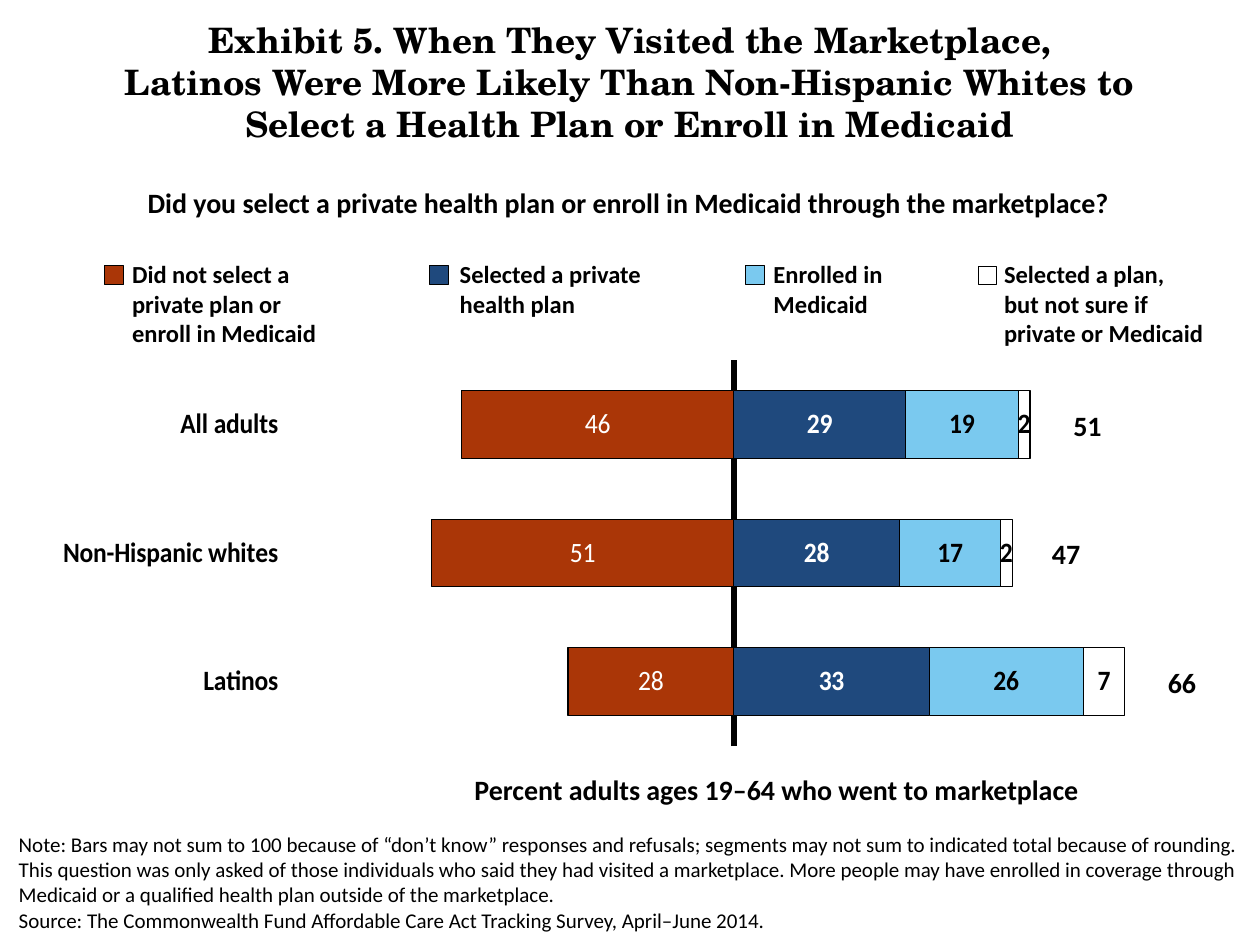
from lxml import etree
from pptx import Presentation
from pptx import util as u
from pptx.chart import data as chart_data
from pptx.dml.color import RGBColor
from pptx.enum import chart as ch, shapes, text
from pptx.oxml import ns

BLACK = RGBColor(0x00, 0x00, 0x00)
WHITE = RGBColor(0xFF, 0xFF, 0xFF)
RUST = RGBColor(0xAA, 0x36, 0x07)
NAVY = RGBColor(0x1F, 0x49, 0x7D)
SKY = RGBColor(0x7A, 0xC9, 0xEF)
BODY_FONT = "Calibri"
TITLE_FONT = "TeX Gyre Schola"
CENTER = text.PP_ALIGN.CENTER
LEFT = text.PP_ALIGN.LEFT


def write_lines(para, lines, size, bold=True, name=BODY_FONT, align=LEFT):
    para.alignment = align
    for index, line in enumerate(lines):
        if index:
            para.add_line_break()
        span = para.add_run()
        span.text = line
        span.font.size = u.Pt(size)
        span.font.bold = bold
        span.font.name = name
        span.font.color.rgb = BLACK


def add_text(left, top, width, height, lines, size, align=LEFT, wrap=True):
    box = page.shapes.add_textbox(
        u.Inches(left), u.Inches(top), u.Inches(width), u.Inches(height))
    box.text_frame.word_wrap = wrap
    write_lines(box.text_frame.paragraphs[0], lines, size, align=align)


deck = Presentation()
deck.slide_width = u.Inches(10)
deck.slide_height = u.Inches(7.5)
page = deck.slides.add_slide(deck.slide_layouts[5])

title = page.shapes.title
title.left, title.top = u.Inches(0), u.Inches(0.1)
title.width, title.height = u.Inches(10), u.Inches(1.1)
title.text_frame.vertical_anchor = text.MSO_ANCHOR.MIDDLE
write_lines(title.text_frame.paragraphs[0], [
    "Exhibit 5. When They Visited the Marketplace,",
    "Latinos Were More Likely Than Non-Hispanic Whites to",
    "Select a Health Plan or Enroll in Medicaid",
], 20, name=TITLE_FONT, align=CENTER)

series_rows = [
    ("Selected a private health plan", (33, 28, 29), NAVY, WHITE, True),
    ("Enrolled in Medicaid", (26, 17, 19), SKY, BLACK, True),
    ("Selected a plan, but not sure", (7, 2, 2), None, BLACK, True),
    ("Did not select a plan", (-28, -51, -46), RUST, WHITE, False),
]
values = chart_data.CategoryChartData()
values.categories = ["Latinos", "Non-Hispanic whites", "All adults"]
for name, numbers, *_ in series_rows:
    values.add_series(name, numbers)

chart = page.shapes.add_chart(
    ch.XL_CHART_TYPE.BAR_STACKED, u.Inches(0.5), u.Inches(2.02),
    u.Inches(9.04), u.Inches(4.73), values).chart
chart.has_legend = False
chart.has_title = False
chart.font.size = u.Pt(16)
chart.font.bold = True
chart.font.name = BODY_FONT
chart.font.color.rgb = BLACK

category_axis = chart.category_axis
category_axis.tick_label_position = ch.XL_TICK_LABEL_POSITION.LOW
category_axis.major_tick_mark = ch.XL_TICK_MARK.NONE
category_axis.minor_tick_mark = ch.XL_TICK_MARK.NONE
category_axis.format.line.color.rgb = BLACK
category_axis.format.line.width = u.Pt(4)

value_axis = chart.value_axis
value_axis.visible = False
value_axis.has_major_gridlines = False
value_axis.minimum_scale = -75
value_axis.maximum_scale = 75
value_axis.major_unit = 25

plot = chart.plots[0]
plot.gap_width = 90
plot.overlap = 100
plot.vary_by_categories = False
for series, (_, _, color, label_color, bold) in zip(plot.series, series_rows):
    series.invert_if_negative = False
    if color is None:
        series.format.fill.background()
    else:
        series.format.fill.solid()
        series.format.fill.fore_color.rgb = color
    series.format.line.color.rgb = BLACK
    series.format.line.width = u.Pt(0.75)
    labels = series.data_labels
    labels.show_value = True
    labels.number_format = "0;0"
    labels.number_format_is_linked = False
    labels.font.size = u.Pt(16)
    labels.font.bold = bold
    labels.font.name = BODY_FONT
    labels.font.color.rgb = label_color

plot_area = chart.element.find(".//" + ns.qn("c:plotArea"))
layout = plot_area.find(ns.qn("c:layout"))
if layout is None:
    layout = etree.Element(ns.qn("c:layout"))
    plot_area.insert(0, layout)
manual = etree.SubElement(layout, ns.qn("c:manualLayout"))
for tag, value in [
    ("layoutTarget", "inner"), ("xMode", "edge"), ("yMode", "edge"),
    ("x", "0.123"), ("y", "0.177"), ("w", "0.854"), ("h", "0.648"),
]:
    etree.SubElement(manual, ns.qn("c:" + tag)).set("val", value)

add_text(0.34, 1.42, 9.3, 0.37, [
    "Did you select a private health plan or enroll in Medicaid through the marketplace?",
], 16, CENTER)
add_text(2.83, 6.08, 6.67, 0.37,
         ["Percent adults ages 19–64 who went to marketplace"], 16, CENTER)

for left, top, total in [(8.42, 3.19, "51"), (8.25, 4.21, "47"), (9.17, 5.23, "66")]:
    add_text(left, top, 0.75, 0.37, [total], 16)

for left, label_left, width, color, border, lines in [
    (0.83, 0.95, 1.67, RUST, 0.5,
     ["Did not select a", "private plan or", "enroll in Medicaid"]),
    (3.41, 3.55, 1.65, NAVY, 0.5, ["Selected a private", "health plan"]),
    (5.92, 6.04, 1.08, SKY, 0.5, ["Enrolled in", "Medicaid"]),
    (7.76, 7.87, 1.79, None, 0.25,
     ["Selected a plan,", "but not sure if", "private or Medicaid"]),
]:
    swatch = page.shapes.add_shape(
        shapes.MSO_SHAPE.RECTANGLE, u.Inches(left), u.Inches(2.11),
        u.Inches(0.15), u.Inches(0.15))
    swatch.shadow.inherit = False
    if color is None:
        swatch.fill.background()
    else:
        swatch.fill.solid()
        swatch.fill.fore_color.rgb = color
    swatch.line.color.rgb = BLACK
    swatch.line.width = u.Pt(border)
    add_text(label_left, 2.01, width, 0.1 + 0.24 * len(lines), lines, 14, wrap=False)

notes = page.shapes.add_textbox(
    u.Inches(0.05), u.Inches(6.55), u.Inches(9.95), u.Inches(0.91)).text_frame
notes.word_wrap = True
write_lines(notes.paragraphs[0], [
    "Note: Bars may not sum to 100 because of “don’t know” responses and refusals; "
    "segments may not sum to indicated total because of rounding. This question was "
    "only asked of those individuals who said they had visited a marketplace. More "
    "people may have enrolled in coverage through Medicaid or a qualified health plan "
    "outside of the marketplace.",
], 12, bold=False)
write_lines(notes.add_paragraph(), [
    "Source: The Commonwealth Fund Affordable Care Act Tracking Survey, April–June 2014.",
], 12, bold=False)

deck.save("out.pptx")
